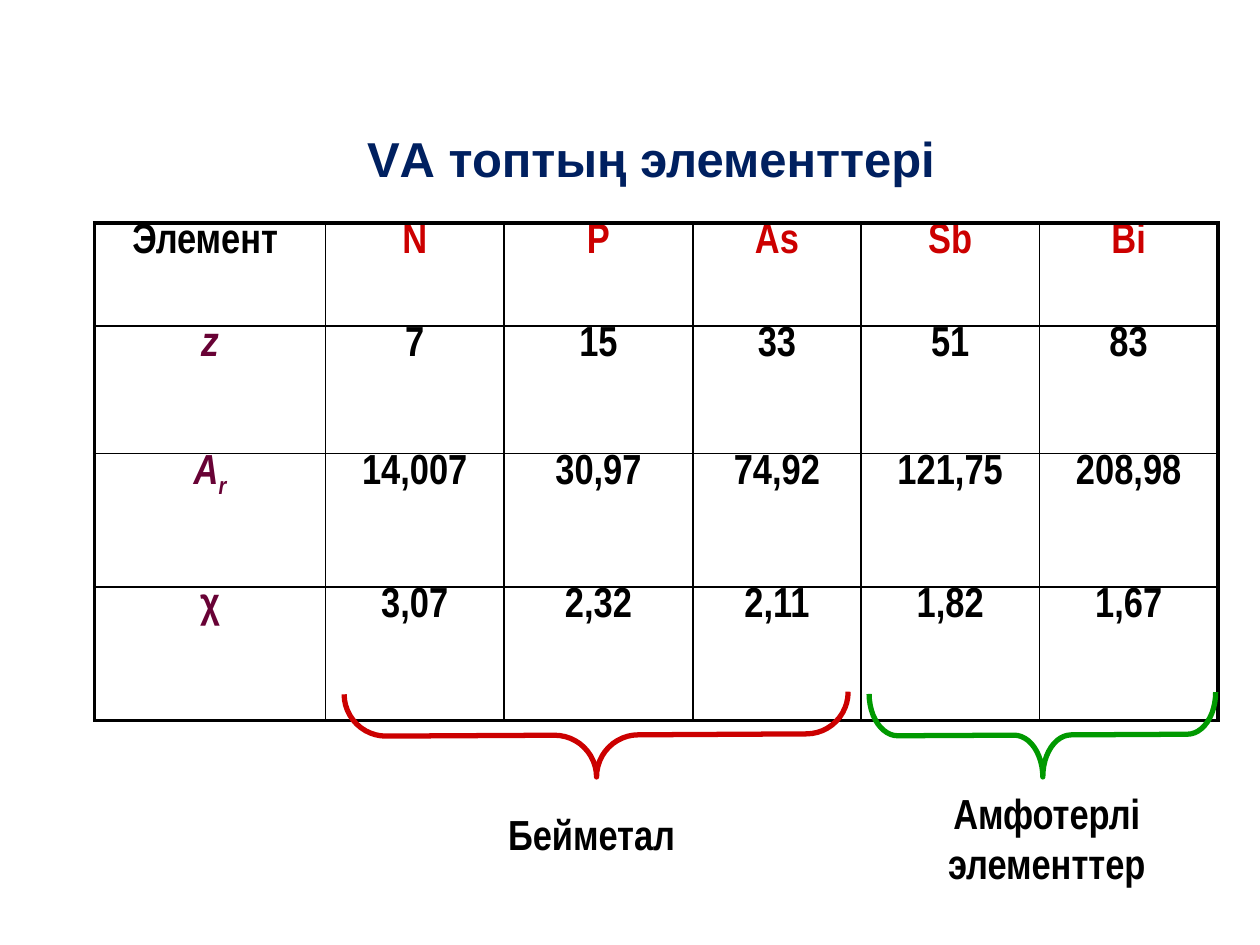
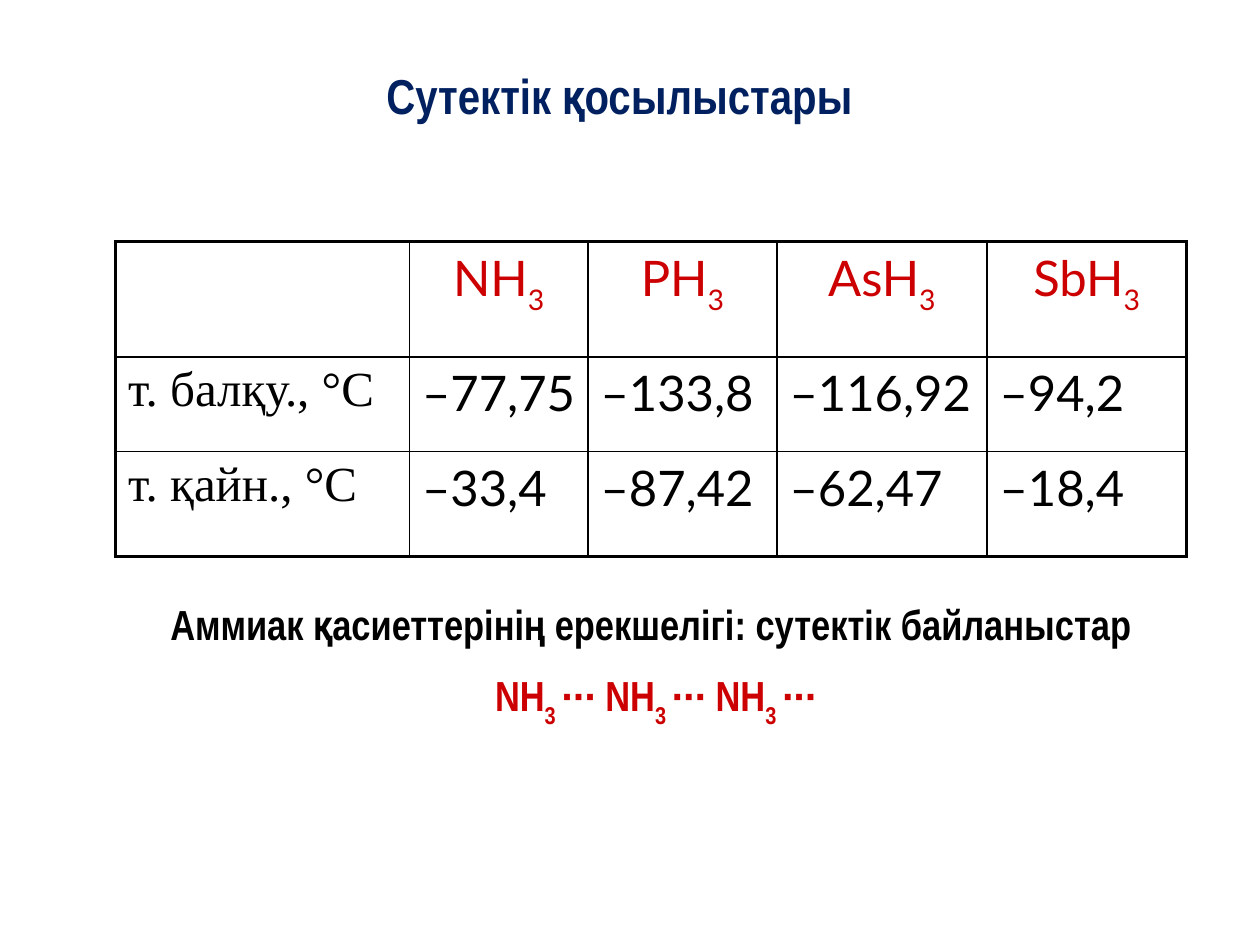
from pptx import Presentation, util as u
from pptx.dml import color
from pptx.enum import shapes, text
from pptx.oxml import ns, xmlchemy as xc

HUES = {"title": "002060", "ink": "000000", "red": "CC0000",
        "plum": "680235", "green": "009900", "white": "FFFFFF"}
NARROW, SANS, SERIF, LATO = "Arial Narrow", "Arial", "Times New Roman", "Lato"
MID, LEFT = text.PP_ALIGN.CENTER, text.PP_ALIGN.LEFT
THIN, THICK = 1, 2.25

# Grid of 120 columns by 90 rows over the slide
WIDE, HIGH = u.Inches(10), u.Inches(7.5)
COL, ROW = WIDE / 120, HIGH / 90

HEAD = dict(font=SANS, size=28, hue="title", bold=True)
BODY = dict(font=NARROW, size=24, hue="ink", bold=True)
DATA = dict(font=LATO, size=28, hue="ink", bold=False)


def rgb(hue):
    return color.RGBColor.from_string(HUES[hue])


def place(box):
    """Turn a grid box (column, row, columns, rows) into lengths."""
    x, y, w, h = box
    return int(x * COL), int(y * ROW), int(w * COL), int(h * ROW)


def write(par, words, font, size, hue, bold, slant=False, drop=-30, align=MID):
    """Add runs; the parts between underscores alternate with subscripts."""
    par.alignment = align
    for n, part in enumerate(words.split("_")):
        run = par.add_run()
        run.text = part
        face = run.font
        face.name, face.size = font, u.Pt(size)
        face.bold, face.italic = bold, slant
        face.color.rgb = rgb(hue)
        if n % 2:
            face._element.set("baseline", str(drop * 1000))


def fit(frame, anchor):
    frame.word_wrap = True
    frame.vertical_anchor = anchor


def title(slide, box, words, **style):
    frame = slide.shapes.add_textbox(*place(box)).text_frame
    fit(frame, text.MSO_ANCHOR.MIDDLE)
    write(frame.paragraphs[0], words, **{**HEAD, **style})


def label(slide, box, words):
    frame = slide.shapes.add_textbox(*place(box)).text_frame
    fit(frame, text.MSO_ANCHOR.TOP)
    frame.margin_top = u.Inches(0.08)
    write(frame.paragraphs[0], words, **BODY)


def edge(cell, sides):
    """Draw the four cell borders from a dict of side and width."""
    props = cell._tc.get_or_add_tcPr()
    for side in "LRTB":
        line = xc.OxmlElement(f"a:ln{side}")
        line.set("w", str(u.Pt(sides[side])))
        fill = xc.OxmlElement("a:solidFill")
        tint = xc.OxmlElement("a:srgbClr")
        tint.set("val", HUES["ink"])
        fill.append(tint)
        line.append(fill)
        props.append(line)


def grid(slide, spot, cols, rows, cells, style, pad):
    """Draw a table with a thick frame; style(r, c) gives the run format."""
    box = (*spot, sum(cols), sum(rows))
    table = slide.shapes.add_table(len(rows), len(cols), *place(box)).table
    table.first_row = table.horz_banding = False
    for c, w in enumerate(cols):
        table.columns[c].width = int(w * COL)
    for r, h in enumerate(rows):
        table.rows[r].height = int(h * ROW)
        for c, words in enumerate(cells[r]):
            cell = table.cell(r, c)
            cell.margin_top = cell.margin_bottom = u.Inches(pad)
            outer = {"L": c == 0, "R": c == len(cols) - 1,
                     "T": r == 0, "B": r == len(rows) - 1}
            edge(cell, {k: THICK if v else THIN for k, v in outer.items()})
            cell.fill.background()
            if words:
                write(cell.text_frame.paragraphs[0], words, **style(r, c))


def brace(slide, box, hue, curl):
    """Draw a brace that opens upward and fills the box once turned."""
    x, y, w, h = place(box)
    mark = slide.shapes.add_shape(
        shapes.MSO_SHAPE.LEFT_BRACE,
        x + (w - h) // 2, y + (h - w) // 2, h, w)
    mark.rotation = 269.7
    mark.shadow.inherit = False
    mark.adjustments[0], mark.adjustments[1] = curl, 0.5
    mark.fill.background()
    mark.line.color.rgb = rgb(hue)
    mark.line.width = u.Pt(3)


def note(slide, box, lines):
    """Draw a white panel with one paragraph for each (words, hue)."""
    panel = slide.shapes.add_shape(shapes.MSO_SHAPE.RECTANGLE, *place(box))
    panel.shadow.inherit = False
    panel.fill.solid()
    panel.fill.fore_color.rgb = rgb("white")
    panel.line.fill.background()
    frame = panel.text_frame
    fit(frame, text.MSO_ANCHOR.TOP)
    frame.margin_top = u.Inches(0.08)
    for n, (words, hue) in enumerate(lines):
        par = frame.add_paragraph() if n else frame.paragraphs[0]
        if n:
            par.space_before = u.Pt(12)
        write(par, words, **{**BODY, "hue": hue})


def group(slide):
    """Elements of the group: table, braces and their labels."""
    title(slide, (11, 11, 102, 8), "VА топтың элементтері")

    def style(r, c):
        if c == 0 and r:
            return {**BODY, "hue": "plum", "slant": r < 3, "drop": -25}
        return {**BODY, "hue": "ink" if r or c == 0 else "red"}

    cells = [["Элемент ", "N", "P", "As", "Sb", "Bi"],
             ["z", "7", "15", "33", "51", "83"],
             ["A_r", "14,007", "30,97", "74,92", "121,75", "208,98"],
             ["χ", "3,07", "2,32", "2,11", "1,82", "1,67"]]
    grid(slide, (9, 21.25), [22, 17, 18, 16, 17, 17],
         [9.8, 12.15, 12.7, 12.7], cells, style, 0)

    # Nonmetals, then amphoteric elements
    brace(slide, (32.8, 66, 48, 8), "red", 0.5)
    label(slide, (34.8, 76, 44, 6), "Бейметал ")
    brace(slide, (82.8, 66, 33, 8), "green", 0.34)
    label(slide, (84.7, 74, 30, 11), "Амфотерлі элементтер")


def hydrides(slide):
    """Hydrogen compounds: table and a note on ammonia."""
    title(slide, (8, 4, 102, 10), "Сутектік қосылыстары", font=NARROW)

    def style(r, c):
        if r == 0:
            return {**DATA, "hue": "red"}
        return {**DATA, "align": LEFT, "font": LATO if c else SERIF}

    cells = [["", "NH_3", "PH_3", "AsH_3", "SbH_3"],
             ["т. балқу., °С", "–77,75", "–133,8", "–116,92", "–94,2"],
             ["т. қайн., °С", "–33,4", "–87,42", "–62,47", "–18,4"]]
    grid(slide, (11, 23), [28, 17, 18, 20, 19], [11, 9, 10],
         cells, style, 0.05)

    note(slide, (11, 56, 102, 13.3), [
        ("Аммиак қасиеттерінің ерекшелігі: сутектік байланыстар", "ink"),
        (" NH_3 _··· NH_3 _··· NH_3 _···", "red")])


def main():
    deck = Presentation()
    deck.slide_width, deck.slide_height = WIDE, HIGH
    for build in (group, hydrides):
        build(deck.slides.add_slide(deck.slide_layouts[6]))
    deck.save("out.pptx")


if __name__ == "__main__":
    main()
